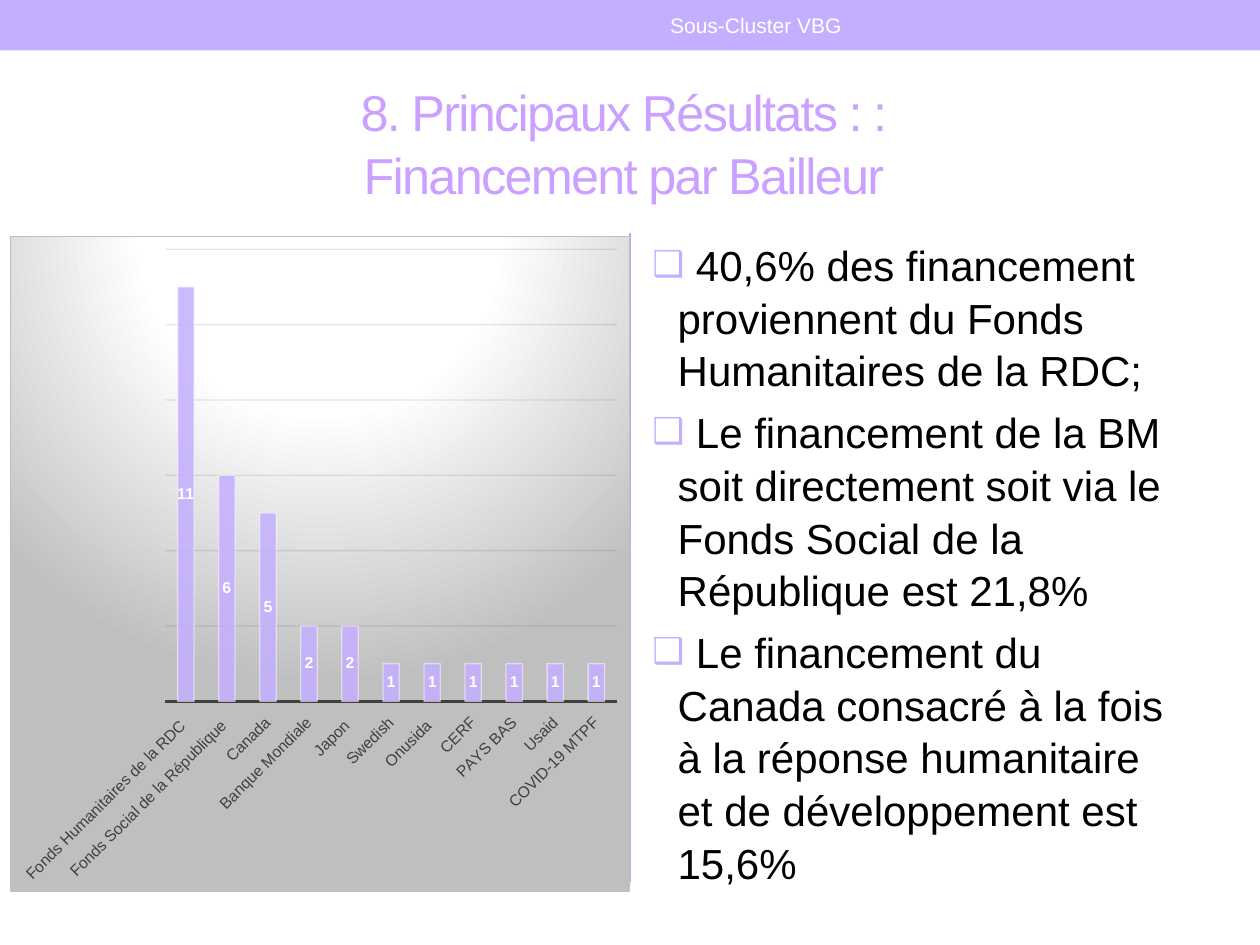
from dataclasses import dataclass

from lxml import etree
from pptx import Presentation
from pptx.chart.data import CategoryChartData
from pptx.dml.color import RGBColor
from pptx.enum.chart import XL_CHART_TYPE as ChartType
from pptx.enum.chart import XL_LABEL_POSITION as LabelPosition
from pptx.enum.chart import XL_TICK_LABEL_POSITION as TickLabelPosition
from pptx.enum.chart import XL_TICK_MARK as TickMark
from pptx.enum.shapes import MSO_CONNECTOR as Connector
from pptx.enum.shapes import MSO_SHAPE as Shape
from pptx.enum.text import MSO_ANCHOR as Anchor
from pptx.enum.text import PP_ALIGN as Align
from pptx.oxml import parse_xml
from pptx.oxml.ns import nsdecls, qn
from pptx.util import Inches, Pt


@dataclass(frozen=True)
class Theme:
    font: str = "Arial"
    lilac: str = "C4AEFF"
    violet: str = "CBA1FF"
    white: str = "FFFFFF"
    black: str = "000000"
    axis: str = "404040"
    grid: str = "0D0D0D"
    gray: str = "BFBFBF"
    title_size: float = 28.8
    body_size: float = 24
    header_size: float = 12
    chart_size: float = 10
    label_size: float = 9


@dataclass(frozen=True)
class TextBlock:
    box: tuple[float, float, float, float]
    paragraphs: tuple[str, ...]
    size: float
    color: str
    align: Align = Align.LEFT
    anchor: Anchor = Anchor.MIDDLE
    line_spacing: float = 1.0
    tracking: int = 0
    bulleted: bool = False


@dataclass(frozen=True)
class Donor:
    name: str
    count: int


THEME = Theme()

TEXT_BLOCKS = (
    TextBlock((0.5, 0.58, 9, 1.08),
              ("8. Principaux Résultats : : \vFinancement par Bailleur ",),
              THEME.title_size, THEME.violet, Align.CENTER,
              line_spacing=1.05, tracking=-100),
    TextBlock((3.75, 0.02, 4.5, 0.36), ("Sous-Cluster VBG",),
              THEME.header_size, THEME.white, Align.CENTER),
    TextBlock((5.08, 1.83, 4.42, 5.16), (
        " 40,6% des financement proviennent du Fonds Humanitaires de la RDC;",
        " Le financement de la BM soit directement soit via le Fonds Social "
        "de la République est 21,8%",
        " Le financement du Canada consacré à la fois à la réponse humanitaire "
        "et de développement est 15,6%",
    ), THEME.body_size, THEME.black, anchor=Anchor.TOP,
        line_spacing=1.05, bulleted=True),
)

DONORS = (
    Donor("Fonds Humanitaires de la RDC ", 11),
    Donor("Fonds Social de la République ", 6),
    Donor("Canada", 5),
    Donor("Banque Mondiale", 2),
    Donor("Japon ", 2),
    Donor("Swedish", 1),
    Donor("Onusida ", 1),
    Donor("CERF", 1),
    Donor("PAYS BAS", 1),
    Donor("Usaid", 1),
    Donor("COVID-19 MTPF", 1),
)


def rgb(color: str) -> RGBColor:
    return RGBColor.from_string(color)


def style_font(font, size: float, color: str, bold: bool = False) -> None:
    font.name = THEME.font
    font.size = Pt(size)
    font.bold = bold
    font.color.rgb = rgb(color)


def style_line(line, color: str, width: float) -> None:
    line.color.rgb = rgb(color)
    line.width = Pt(width)


def set_opacity(properties, percent: int) -> None:
    """Make the solid colour inside a fill or line element see-through."""
    color = properties.find(qn("a:solidFill")).find(qn("a:srgbClr"))
    etree.SubElement(color, qn("a:alpha")).set("val", str(percent * 1000))


def add_bullet(paragraph) -> None:
    properties = paragraph._p.get_or_add_pPr()
    properties.set("marL", str(Inches(0.2)))
    properties.set("indent", str(-Inches(0.2)))
    color = etree.SubElement(properties, qn("a:buClr"))
    etree.SubElement(color, qn("a:srgbClr")).set("val", THEME.lilac)
    for tag, name, value in (("a:buSzPct", "val", "85000"),
                             ("a:buFont", "typeface", THEME.font),
                             ("a:buChar", "char", "❑")):
        etree.SubElement(properties, qn(tag)).set(name, value)


def add_text(slide, block: TextBlock) -> None:
    shape = slide.shapes.add_textbox(*map(Inches, block.box))
    text_frame = shape.text_frame
    text_frame.word_wrap = True
    text_frame.vertical_anchor = block.anchor
    text_frame.text = "\n".join(block.paragraphs)
    for paragraph in text_frame.paragraphs:
        paragraph.alignment = block.align
        paragraph.line_spacing = block.line_spacing
        if block.bulleted:
            paragraph.space_before = Pt(0.2 * block.size)
            add_bullet(paragraph)
        for run in paragraph.runs:
            style_font(run.font, block.size, block.color)
            if block.tracking:
                run.font._element.set("spc", str(block.tracking))


def add_frame(slide) -> None:
    # Header band
    band = slide.shapes.add_shape(Shape.RECTANGLE, 0, 0, Inches(10), Inches(0.4))
    band.shadow.inherit = False
    band.fill.solid()
    band.fill.fore_color.rgb = rgb(THEME.lilac)
    band.line.fill.background()
    # Column divider
    divider = slide.shapes.add_connector(
        Connector.STRAIGHT, Inches(5), Inches(1.85), Inches(5), Inches(7))
    style_line(divider.line, THEME.violet, 1.5)
    etree.SubElement(divider._element.spPr, qn("a:effectLst"))


def style_chart_area(chart) -> None:
    """Give the chart a radial background, a border and a fixed plot area."""
    stops = "".join(
        f'<a:gs pos="{position * 1000}"><a:srgbClr val="{color}"/></a:gs>'
        for position, color in ((0, THEME.white), (39, THEME.white), (100, THEME.gray)))
    background = parse_xml(
        f'<c:spPr {nsdecls("c", "a")}><a:gradFill><a:gsLst>{stops}</a:gsLst>'
        '<a:path path="circle"><a:fillToRect l="50000" t="-80000" r="50000" '
        'b="180000"/></a:path></a:gradFill><a:ln w="9525"><a:solidFill>'
        f'<a:srgbClr val="{THEME.gray}"/></a:solidFill></a:ln></c:spPr>')
    chart_element = chart.element.find(qn("c:chart"))
    chart_element.addnext(background)

    plot_area = chart_element.find(qn("c:plotArea"))
    for old_layout in plot_area.findall(qn("c:layout")):
        plot_area.remove(old_layout)
    layout = etree.Element(qn("c:layout"))
    manual = etree.SubElement(layout, qn("c:manualLayout"))
    for tag, value in (("layoutTarget", "inner"), ("xMode", "edge"), ("yMode", "edge"),
                       ("x", "0.25"), ("y", "0.02"), ("w", "0.73"), ("h", "0.69")):
        etree.SubElement(manual, qn(f"c:{tag}")).set("val", value)
    plot_area.insert(0, layout)


def add_donor_chart(slide, donors: tuple[Donor, ...]) -> None:
    data = CategoryChartData()
    data.categories = [donor.name for donor in donors]
    data.add_series("Series 1", [donor.count for donor in donors])
    chart = slide.shapes.add_chart(
        ChartType.COLUMN_STACKED, Inches(0.08), Inches(1.87),
        Inches(4.92), Inches(5.21), data).chart
    chart.has_title = False
    chart.has_legend = False
    style_font(chart.font, THEME.chart_size, THEME.black)
    style_chart_area(chart)

    # Axes
    category_axis = chart.category_axis
    category_axis.major_tick_mark = category_axis.minor_tick_mark = TickMark.NONE
    category_axis.tick_label_position = TickLabelPosition.LOW
    style_line(category_axis.format.line, THEME.axis, 1.5)
    style_font(category_axis.tick_labels.font, THEME.label_size, THEME.axis)
    category_axis._element.find(qn("c:txPr")).find(qn("a:bodyPr")).set("rot", "-2700000")
    value_axis = chart.value_axis
    value_axis.minimum_scale, value_axis.maximum_scale = 0, 12
    value_axis.major_unit = 2
    value_axis.has_major_gridlines = True
    grid_line = value_axis.major_gridlines.format.line
    style_line(grid_line, THEME.grid, 0.75)
    set_opacity(grid_line._ln, 10)
    value_axis.visible = False

    # Columns and their labels
    plot = chart.plots[0]
    plot.gap_width, plot.overlap = 150, 100
    plot.vary_by_categories = False
    series = plot.series[0]
    series.format.fill.solid()
    series.format.fill.fore_color.rgb = rgb(THEME.lilac)
    set_opacity(series._element.find(qn("c:spPr")), 85)
    style_line(series.format.line, THEME.white, 0.75)
    set_opacity(series.format.line._ln, 50)
    labels = series.data_labels
    labels.show_value = True
    labels.position = LabelPosition.CENTER
    style_font(labels.font, THEME.label_size, THEME.white, bold=True)


def main() -> None:
    presentation = Presentation()
    presentation.slide_width, presentation.slide_height = Inches(10), Inches(7.5)
    slide = presentation.slides.add_slide(presentation.slide_layouts[6])
    add_frame(slide)
    add_donor_chart(slide, DONORS)
    for block in TEXT_BLOCKS:
        add_text(slide, block)
    presentation.save("out.pptx")


if __name__ == "__main__":
    main()
